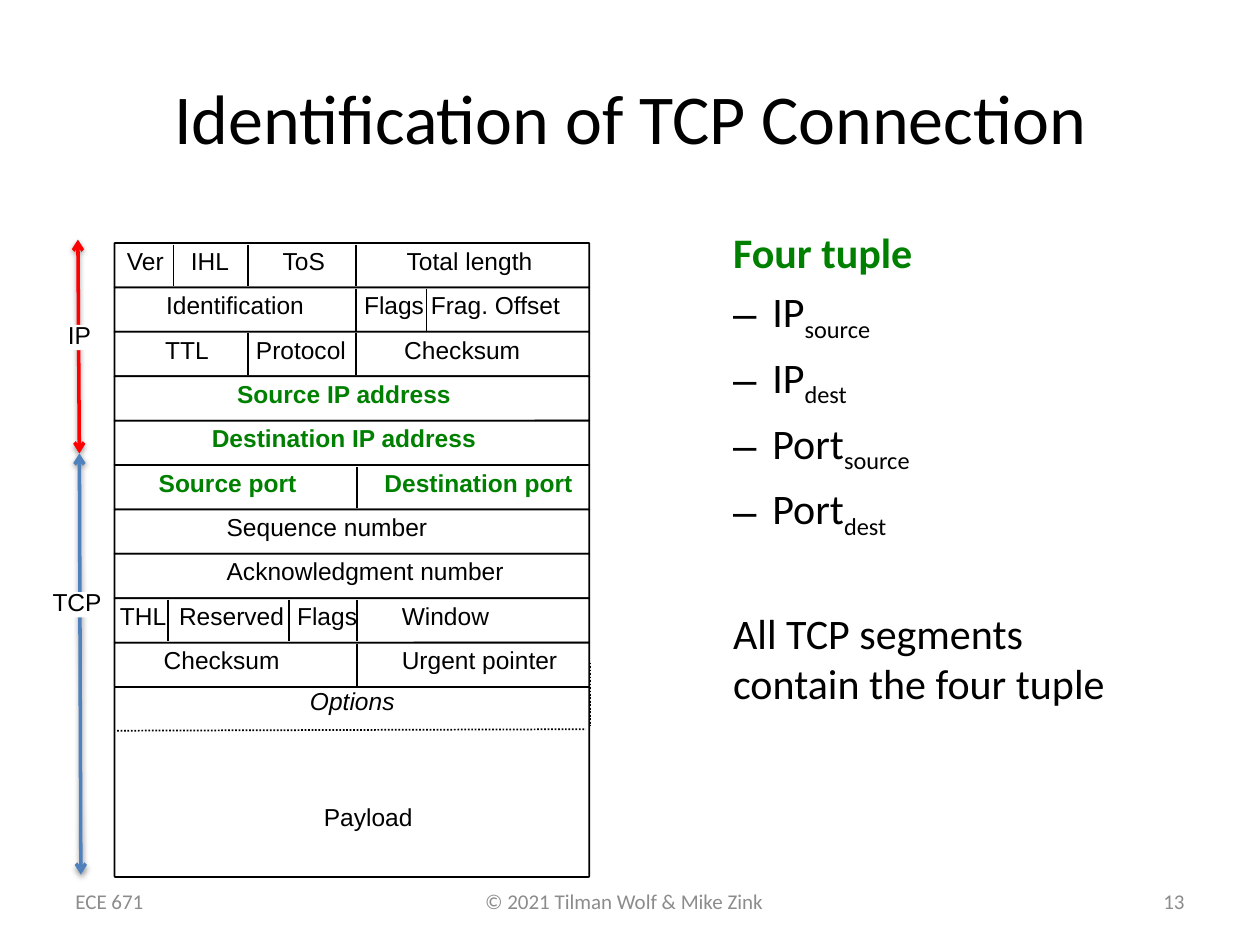
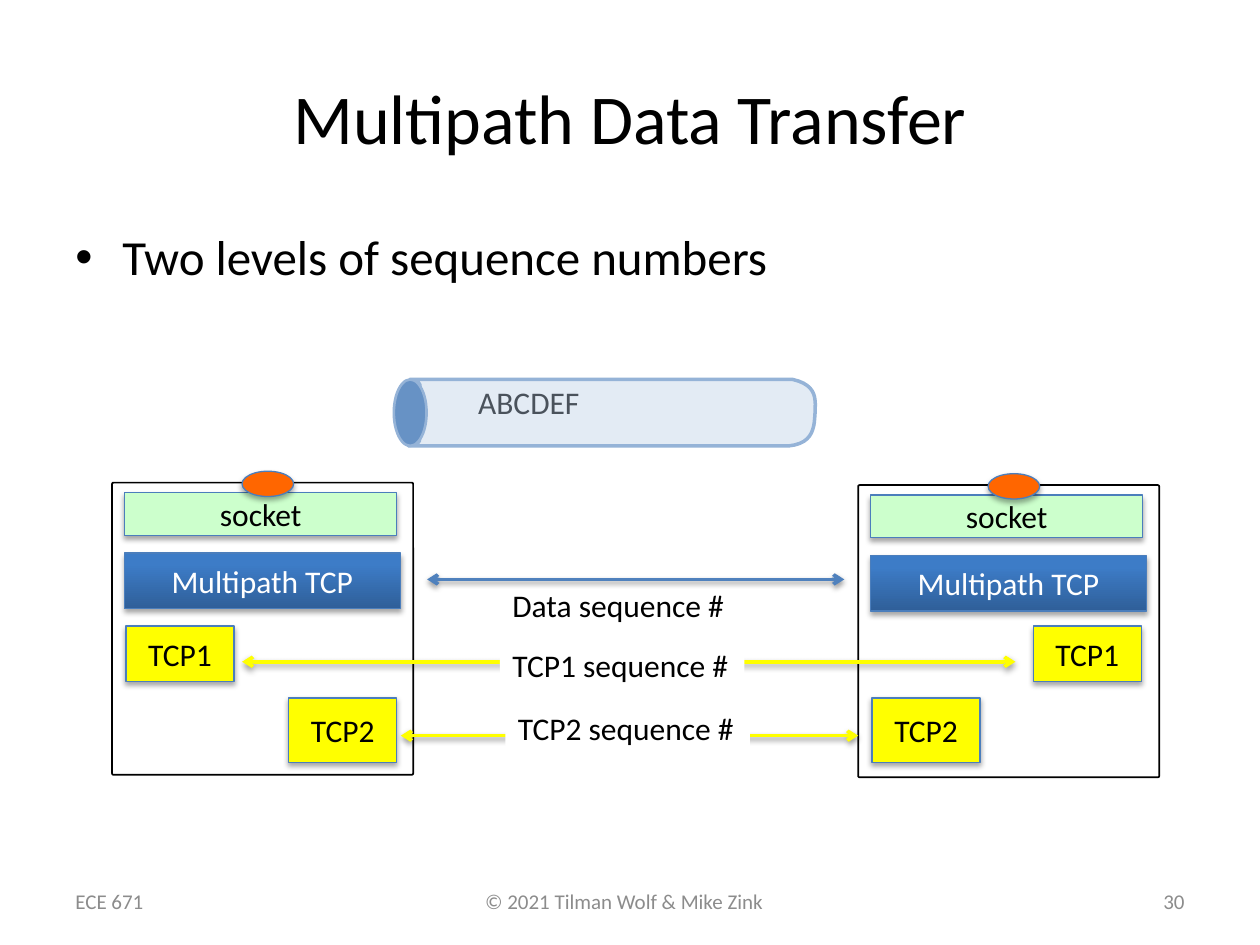
from lxml import etree
from pptx import Presentation
from pptx import util as u
from pptx.dml.color import RGBColor
from pptx.enum import dml, shapes, text
from pptx.oxml.ns import qn

BLACK = RGBColor(0x00, 0x00, 0x00)
WHITE = RGBColor(0xFF, 0xFF, 0xFF)
GREY = RGBColor(0x8C, 0x8C, 0x8C)
GREEN = RGBColor(0x00, 0x80, 0x00)
RED = RGBColor(0xFF, 0x00, 0x00)
BLUE = RGBColor(0x4F, 0x81, 0xBD)
EDGE = RGBColor(0x4B, 0x7E, 0xBC)
YELLOW = RGBColor(0xFF, 0xFF, 0x00)
MINT = RGBColor(0xCC, 0xFF, 0xCC)
ORANGE = RGBColor(0xFF, 0x66, 0x00)
DEEP_BLUE = RGBColor(0x2F, 0x5F, 0x99)
MID_BLUE = RGBColor(0x3D, 0x7C, 0xC7)
PIPE_FILL = RGBColor(0xB9, 0xCD, 0xE5)
PIPE_EDGE = RGBColor(0x95, 0xB3, 0xD7)
PIPE_END = RGBColor(0x67, 0x92, 0xC5)

SHAPE = shapes.MSO_SHAPE
ALIGN = text.PP_ALIGN
ANCHOR = text.MSO_ANCHOR

TABLE_X, TABLE_Y, TABLE_W = 2.31, 4.9, 9.57
ROW_H = 8.95 / 10
LABEL_DY = 0.15

HEADER_ROWS = [
    ([("Ver", 2.56, 0.85), ("IHL", 3.85, 0.85), ("ToS", 5.7, 1.0),
      ("Total length", 8.2, 2.7)], [3.5, 5.0, 7.17]),
    ([("Identification", 3.35, 2.9), ("Flags Frag. Offset", 7.34, 4.1)],
     [7.17, 8.6]),
    ([("TTL", 3.33, 1.0), ("Protocol", 5.16, 1.95), ("Checksum", 8.15, 2.5)],
     [5.0, 7.17]),
    ([("Source IP address", 4.78, 4.45)], []),
    ([("Destination IP address", 4.27, 5.5)], []),
    ([("Source port", 3.2, 2.9), ("Destination port", 7.75, 3.95)], [7.2]),
    ([("Sequence number", 4.57, 4.2)], []),
    ([("Acknowledgment number", 4.57, 5.75)], []),
    ([("THL", 2.42, 1.05), ("Reserved", 3.61, 2.25), ("Flags", 5.99, 1.4),
      ("Window", 8.1, 1.9)], [3.38, 5.82, 7.2]),
    ([("Checksum", 3.3, 2.5), ("Urgent pointer", 8.1, 3.3)], [7.2]),
]
FOUR_TUPLE_ROWS = (3, 4, 5)


def bezier(p0, p1, p2, p3, steps=12):
    for i in range(1, steps + 1):
        t = i / steps
        yield tuple((1 - t) ** 3 * a + 3 * t * (1 - t) ** 2 * b
                    + 3 * t * t * (1 - t) * c + t ** 3 * d
                    for a, b, c, d in zip(p0, p1, p2, p3))


class Deck:
    def __init__(self):
        self.prs = Presentation()
        self.prs.slide_width, self.prs.slide_height = u.Cm(25.4), u.Cm(19.05)
        self.s = None

    def slide(self, title, number):
        self.s = self.prs.slides.add_slide(self.prs.slide_layouts[5])
        sp = self.s.shapes.title
        sp.left, sp.top, sp.width, sp.height = map(u.Cm, (1.27, 0.76, 22.86, 3.18))
        sp.text_frame.text = title
        sp.text_frame.vertical_anchor = ANCHOR.MIDDLE
        sp.text_frame.paragraphs[0].alignment = ALIGN.CENTER
        self.font(sp.text_frame.paragraphs[0], 40)
        self.text("© 2021 Tilman Wolf & Mike Zink", (9.53, 17.78, 6.2, 1.27), 12, GREY)
        for words, x, align in (("ECE 671", 1.27, ALIGN.LEFT),
                                (number, 18.21, ALIGN.RIGHT)):
            self.text(words, (x, 17.65, 5.92, 1.02), 12, GREY,
                      align=align, anchor=ANCHOR.MIDDLE)

    def font(self, p, size, color=BLACK, name="Calibri", bold=False, italic=False):
        for r in p.runs:
            f = r.font
            f.size, f.name, f.bold, f.italic = u.Pt(size), name, bold, italic
            f.color.rgb = color

    def text(self, words, at, size=18, color=BLACK, fill=None,
             align=ALIGN.LEFT, anchor=ANCHOR.TOP):
        sp = self.s.shapes.add_textbox(*map(u.Cm, at))
        if fill is not None:
            sp.fill.solid()
            sp.fill.fore_color.rgb = fill
        tf = sp.text_frame
        tf.text = words
        tf.word_wrap = False
        tf.vertical_anchor = anchor
        tf.paragraphs[0].alignment = align
        self.font(tf.paragraphs[0], size, color)
        return sp

    def tight(self, tf):
        tf.margin_left = tf.margin_right = tf.margin_top = tf.margin_bottom = 0

    def field(self, words, x, y, w, color=BLACK, fill=None, bold=False, italic=False):
        tf = self.text(words, (x, y, w, 0.51), fill=fill).text_frame
        self.tight(tf)
        p = tf.paragraphs[0]
        p.line_spacing = 0.84
        self.font(p, 14, color, "Arial", bold, italic)

    def body(self, at):
        tf = self.s.shapes.add_textbox(*map(u.Cm, at)).text_frame
        tf.word_wrap = True
        return tf

    def item(self, p, words, size, left, hang=0, bullet=None, sub=None,
             color=BLACK, bold=False, before=None):
        p.text = words
        if sub:
            r = p.add_run()
            r.text = sub
            r.font._element.set("baseline", "-25000")
        self.font(p, size, color, bold=bold)
        p.space_before = u.Pt(before or size * 0.2)
        pPr = p._p.get_or_add_pPr()
        pPr.set("marL", str(u.Cm(left)))
        pPr.set("indent", str(-u.Cm(hang)))
        if bullet:
            etree.SubElement(pPr, qn("a:buFont"), typeface="Arial")
            etree.SubElement(pPr, qn("a:buChar"), char=bullet)

    def effect(self, sp, alpha=None, dist=1.6):
        lst = etree.SubElement(sp.element.spPr, qn("a:effectLst"))
        if alpha:
            shadow = etree.SubElement(lst, qn("a:outerShdw"), blurRad=str(u.Pt(3.1)),
                                      dist=str(u.Pt(dist)), dir="5400000", rotWithShape="0")
            clr = etree.SubElement(shadow, qn("a:srgbClr"), val="000000")
            etree.SubElement(clr, qn("a:alpha"), val=str(alpha * 1000))

    def outline(self, sp, color, width):
        sp.line.color.rgb = color
        sp.line.width = u.Pt(width)

    def shape(self, kind, at, fill, edge=EDGE, width=0.75, shadow=None):
        sp = self.s.shapes.add_shape(kind, *map(u.Cm, at))
        if fill is None:
            sp.fill.background()
        else:
            sp.fill.solid()
            sp.fill.fore_color.rgb = fill
        self.outline(sp, edge, width)
        self.effect(sp, shadow, 1.8)
        return sp

    def frame(self, at, fill=WHITE):
        self.shape(SHAPE.ROUNDED_RECTANGLE, at, fill, BLACK, 1).adjustments[0] = 0.005

    def block(self, words, at, fill, color=BLACK):
        sp = self.shape(SHAPE.RECTANGLE, at, fill, shadow=35)
        tf = sp.text_frame
        tf.text = words
        tf.vertical_anchor = ANCHOR.MIDDLE
        tf.paragraphs[0].alignment = ALIGN.CENTER
        self.font(tf.paragraphs[0], 18, color)
        return sp

    def line(self, x1, y1, x2, y2, color=BLACK, width=1, dotted=False, arrows=False):
        sp = self.s.shapes.add_connector(shapes.MSO_CONNECTOR.STRAIGHT,
                                         *map(u.Cm, (x1, y1, x2, y2)))
        self.outline(sp, color, width)
        if dotted:
            sp.line.dash_style = dml.MSO_LINE.ROUND_DOT
        if arrows:
            ln = sp.line._get_or_add_ln()
            for end in ("a:headEnd", "a:tailEnd"):
                etree.SubElement(ln, qn(end), type="arrow")
        self.effect(sp, 38 if arrows else None)

    def pipe(self):
        pts = [(8.23, 8.99), (15.9, 8.99)]
        pts += bezier(pts[-1], (16.43, 8.94), (16.41, 8.56), (16.43, 8.33))
        pts += bezier(pts[-1], (16.43, 8.1), (16.51, 7.77), (15.98, 7.65))
        pts.append((8.26, 7.65))
        pts += bezier(pts[-1], (8.76, 7.72), (8.2, 8.08), (8.23, 8.33))
        pts += bezier(pts[-1], (8.13, 8.59), (8.79, 8.92), (8.23, 8.99))
        emu = [(u.Cm(x), u.Cm(y)) for x, y in pts]
        fb = self.s.shapes.build_freeform(*emu[0])
        fb.add_line_segments(emu[1:], close=True)
        sp = fb.convert_to_shape()
        sp.fill.solid()
        sp.fill.fore_color.rgb = PIPE_FILL
        clr = sp.element.spPr.find(qn("a:solidFill"))[0]
        etree.SubElement(clr, qn("a:alpha"), val="40000")
        self.outline(sp, PIPE_EDGE, 2)
        self.effect(sp)
        self.shape(SHAPE.OVAL, (7.94, 7.65, 0.66, 1.34), PIPE_END, PIPE_EDGE, 1.5)

    def host(self, x, y, tcp1_x, tcp2_x):
        self.frame((x, y, 6.07, 5.89), None)
        sp = self.block("Multipath TCP", (x + 0.25, y + 1.42, 5.56, 1.12), MID_BLUE, WHITE)
        sp.fill.gradient()
        sp.fill.gradient_angle = 90
        for stop, color, pos in zip(sp.fill.gradient_stops, (DEEP_BLUE, MID_BLUE), (0, 0.8)):
            stop.color.rgb, stop.position = color, pos
        self.block("TCP1", (tcp1_x, 12.62, 2.18, 1.12), YELLOW)
        self.block("socket", (x + 0.25, y + 0.2, 5.49, 0.86), MINT)
        self.block("TCP2", (tcp2_x, 14.07, 2.18, 1.3), YELLOW)
        self.shape(SHAPE.OVAL, (x + 2.62, y - 0.23, 1.04, 0.51), ORANGE, shadow=35)


def connection_slide(d):
    d.slide("Identification of TCP Connection", "13")
    tf = d.body((13.26, 4.45, 10.01, 12.57))
    d.item(tf.paragraphs[0], "Four tuple", 24, 1.27, color=GREEN, bold=True)
    for words, sub in (("IP", "source"), ("IP", "dest"), ("Port", "source"), ("Port", "dest")):
        d.item(tf.add_paragraph(), words, 24, 2.06, 0.79, "–", sub)
    d.item(tf.add_paragraph(), "All TCP segments contain the four tuple", 24, 1.27, before=38.5)

    for i, (labels, dividers) in enumerate(HEADER_ROWS):
        y = TABLE_Y + i * ROW_H
        d.frame((TABLE_X, y, TABLE_W, ROW_H))
        key = i in FOUR_TUPLE_ROWS
        for words, x, w in labels:
            d.field(words, x, y + LABEL_DY, w, GREEN if key else BLACK, bold=key)
        for x in dividers:
            d.line(x, y + 0.03, x, y + 0.87)
    for x in (TABLE_X, TABLE_X + TABLE_W + 0.02):
        d.line(x, 13.36, x, 14.63, dotted=True)
    d.frame((TABLE_X, TABLE_Y + 10 * ROW_H, TABLE_W, 3.83))
    d.field("Payload", 6.53, 16.26, 1.95)
    d.field("Options", 6.25, 13.92, 1.95, italic=True)
    d.line(2.36, 14.73, 11.81, 14.7, dotted=True)

    d.line(1.57, 4.83, 1.6, 9.14, RED, 2, arrows=True)
    d.line(1.6, 9.14, 1.63, 17.63, BLUE, 2, arrows=True)
    d.field("IP", 1.37, 6.55, 0.5, fill=WHITE)
    d.field("TCP", 1.06, 11.94, 1.02, fill=WHITE)


def transfer_slide(d):
    d.slide("Multipath Data Transfer", "30")
    tf = d.body((1.27, 4.45, 22.86, 1.7))
    d.item(tf.paragraphs[0], "Two levels of sequence numbers", 28, 0.95, 0.95, "•")
    d.host(2.26, 9.73, 2.54, 5.82)
    d.host(17.3, 9.78, 20.83, 17.58)
    d.tight(d.text("ABCDEF", (9.64, 7.72, 2.36, 0.76)).text_frame)
    d.pipe()
    for x1, x2, y, color in ((8.61, 17.02, 11.68, BLUE), (4.88, 20.47, 13.34, YELLOW),
                             (8.08, 17.3, 14.83, YELLOW)):
        d.line(x1, y, x2, y, color, 2, arrows=True)
    d.text("Data sequence #", (10.08, 11.68, 4.83, 1.02))
    d.text("TCP1 sequence #", (10.08, 12.9, 4.93, 1.02), fill=WHITE)
    d.text("TCP2 sequence #", (10.19, 14.17, 4.93, 1.02), fill=WHITE)


def main():
    d = Deck()
    connection_slide(d)
    transfer_slide(d)
    d.prs.save("out.pptx")


if __name__ == "__main__":
    main()
